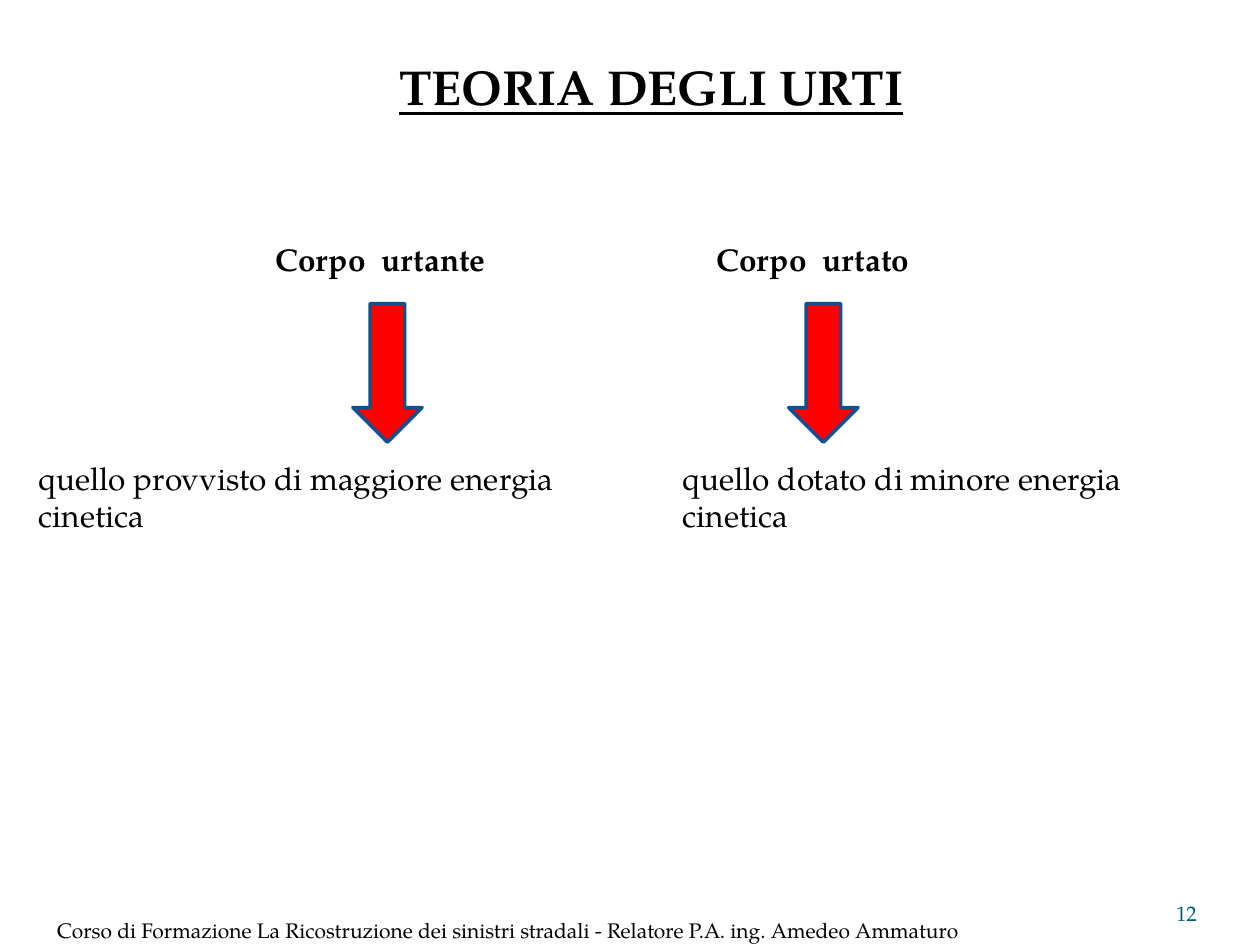
import pptx
import pptx.util
import pptx.dml.color
import pptx.enum.shapes
import pptx.enum.text

WIDTH, HEIGHT = 10, 7.5
FONT = "TeX Gyre Pagella"
ALIGN = pptx.enum.text.PP_ALIGN
ANCHOR = pptx.enum.text.MSO_ANCHOR

TITLE = "TEORIA DEGLI URTI"
BODIES = [
    {"name": "Corpo  urtante", "name_box": (2.09, 1.93), "arrow_left": 2.8,
     "meaning": "quello provvisto di maggiore energia cinetica", "meaning_box": (0.21, 5.11)},
    {"name": "Corpo  urtato", "name_box": (5.59, 1.79), "arrow_left": 6.26,
     "meaning": "quello dotato di minore energia cinetica", "meaning_box": (5.32, 4.48)},
]
FOOTER = "Corso di Formazione La Ricostruzione dei sinistri stradali - Relatore P.A. ing. Amedeo Ammaturo"
PAGE_NUMBER = "12"

NAME_TOP, ARROW_TOP, MEANING_TOP = 1.86, 2.41, 3.59
ARROW_WIDTH, ARROW_HEIGHT = 0.55, 1.1
LINE_HEIGHT = 0.4


def color(value):
    return pptx.dml.color.RGBColor.from_string(value)


def inches(*lengths):
    return [pptx.util.Inches(length) for length in lengths]


def write(shape, text, size, ink="000000", bold=False, underline=False,
          align=ALIGN.LEFT, anchor=ANCHOR.TOP, wrap=True, margin=None):
    frame = shape.text_frame
    frame.word_wrap = wrap
    frame.vertical_anchor = anchor
    if margin is not None:
        frame.margin_left = frame.margin_right = pptx.util.Inches(margin)
        frame.margin_top = frame.margin_bottom = pptx.util.Inches(margin)
    paragraph = frame.paragraphs[0]
    paragraph.alignment = align
    run = paragraph.add_run()
    run.text = text
    run.font.name = FONT
    run.font.size = pptx.util.Pt(size)
    run.font.bold = bold
    run.font.underline = underline
    run.font.color.rgb = color(ink)


def add_text(slide, box, text, size, **style):
    write(slide.shapes.add_textbox(*inches(*box)), text, size, **style)


def add_arrow(slide, left):
    arrow = slide.shapes.add_shape(pptx.enum.shapes.MSO_SHAPE.DOWN_ARROW,
                                   *inches(left, ARROW_TOP, ARROW_WIDTH, ARROW_HEIGHT))
    arrow.shadow.inherit = False
    arrow.fill.solid()
    arrow.fill.fore_color.rgb = color("FF0000")
    arrow.line.color.rgb = color("0B5292")
    arrow.line.width = pptx.util.Pt(2)


def main():
    presentation = pptx.Presentation()
    presentation.slide_width, presentation.slide_height = inches(WIDTH, HEIGHT)
    slide = presentation.slides.add_slide(presentation.slide_layouts[5])

    title = slide.shapes.title
    title.left, title.top, title.width, title.height = inches(0.67, 0.4, 9, 0.57)
    write(title, TITLE, 28, bold=True, underline=True, align=ALIGN.CENTER, anchor=ANCHOR.MIDDLE)

    for body in BODIES:
        left, width = body["name_box"]
        add_text(slide, (left, NAME_TOP, width, LINE_HEIGHT), body["name"], 18, bold=True, wrap=False)
        add_arrow(slide, body["arrow_left"])
        left, width = body["meaning_box"]
        add_text(slide, (left, MEANING_TOP, width, 2 * LINE_HEIGHT), body["meaning"], 18)

    add_text(slide, (0, 7.08, 8.07, LINE_HEIGHT), FOOTER, 12,
             align=ALIGN.CENTER, anchor=ANCHOR.BOTTOM, margin=0)
    add_text(slide, (8.67, 6.95, 0.83, LINE_HEIGHT), PAGE_NUMBER, 12, ink="045D75",
             align=ALIGN.RIGHT, anchor=ANCHOR.BOTTOM, margin=0)
    presentation.save("out.pptx")


if __name__ == "__main__":
    main()
